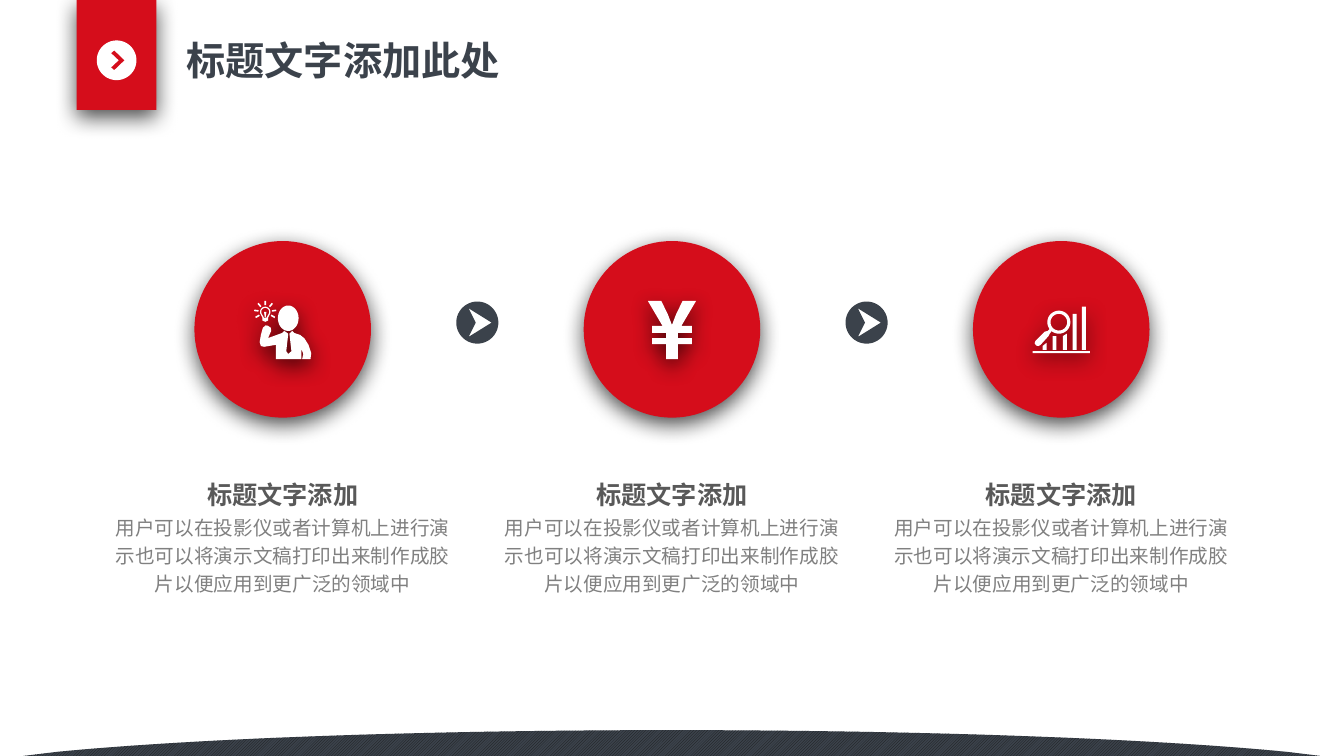
from dataclasses import dataclass
from math import cos, radians, sin

from lxml.etree import SubElement
from pptx import Presentation
from pptx.dml.color import RGBColor
from pptx.enum.dml import MSO_PATTERN
from pptx.enum.lang import MSO_LANGUAGE_ID
from pptx.enum.shapes import MSO_SHAPE
from pptx.enum.text import MSO_ANCHOR, PP_ALIGN
from pptx.oxml.ns import qn
from pptx.util import Cm, Pt

TITLE = "标题文字添加此处"
BODY = "用户可以在投影仪或者计算机上进行演示也可以将演示文稿打印出来制作成胶片以便应用到更广泛的领域中"
STEPS = [("标题文字添加", BODY, "person"), ("标题文字添加", BODY, "yen"), ("标题文字添加", BODY, "growth")]


@dataclass(frozen=True)
class Theme:
    red: str = "D50D1B"
    dark: str = "3B424B"
    stripe: str = "181818"
    white: str = "FFFFFF"
    heading: str = "595959"
    body: str = "808080"
    title_font: str = "Lato"
    text_font: str = "Arial"
    title_size: int = 28
    heading_size: int = 18
    body_size: int = 14


THEME = Theme()
WIDTH, HEIGHT = 33.87, 19.05
MIDDLE, PITCH = WIDTH / 2, 9.81
DISC_SIZE, DISC_Y, ARROW_Y = 4.45, 8.3, 8.13

# Outlines are in centimetres around the centre of each icon.
CHEVRON = [(-.06, -.25), (-.14, -.18), (.05, 0), (-.14, .18), (-.06, .25), (.2, 0)]
ARROW = [(-.22, -.36), (.36, 0), (-.22, .36), (-.04, 0)]
YEN_HALF = [(.15, .75), (.15, .37), (.5, .37), (.5, .22), (.15, .22), (.15, .09), (.5, .09),
            (.5, -.09), (.24, -.09), (.61, -.72), (.27, -.72), (.1, -.37), (0, -.11)]
TORSO = [(-.37, -.09), (-.3, -.04), (-.29, .04), (-.37, .22), (-.01, .09), (.04, .04),
         (.14, .11), (.09, .55), (.14, .62), (.22, .55), (.17, .11), (.24, .04), (.29, .09),
         (.44, .14), (.55, .23), (.65, .39), (.72, .6), (.7, .75), (.49, .75), (.52, .62),
         (.47, .49), (.47, .75), (-.17, .75), (-.17, .39), (-.47, .44), (-.55, .42),
         (-.58, .32), (-.55, .14), (-.5, -.04), (-.43, -.1)]
HANDLE = [(-.29, -.01), (-.24, .04), (-.29, .11), (-.32, .17), (-.52, .39), (-.57, .42),
          (-.63, .41), (-.67, .35), (-.65, .29), (-.42, .06), (-.34, .04)]
BARS = [(-.47, .42, .34), (-.22, .17, .17), (.04, .17, .11), (.29, -.39, -.39), (.52, -.57, -.57)]
BULB_X, BULB_Y = -.44, -.44
RAY_ANGLES = [-30, 8, 50, 90, 130, 172, 210]


def arc(x, y, across, down, start=0, end=360, steps=60):
    """Points on an ellipse, with angles counted anticlockwise from the right."""
    angles = [radians(start + (end - start) * step / steps) for step in range(steps + 1)]
    return [(x + across * cos(angle), y - down * sin(angle)) for angle in angles]


def bezier(start, first, second, end, steps=30):
    points = []
    for step in range(steps + 1):
        t = step / steps
        weights = ((1 - t) ** 3, 3 * t * (1 - t) ** 2, 3 * t * t * (1 - t), t ** 3)
        points.append(tuple(sum(weight * point[axis] for weight, point in
                                zip(weights, (start, first, second, end))) for axis in (0, 1)))
    return points


def mirror(points):
    return [(-x, y) for x, y in reversed(points)]


def ray(angle):
    across, up = cos(radians(angle)), sin(radians(angle))
    return [(BULB_X + reach * across + side * up, BULB_Y - reach * up + side * across)
            for reach, side in ((.17, -.02), (.28, -.02), (.28, .02), (.17, .02))]


def person():
    bulb = arc(BULB_X, BULB_Y, .13, .13, 210, -30) + [
        (-.37, -.29), (-.37, -.22), (-.44, -.19), (-.51, -.22), (-.51, -.29)]
    glass = arc(BULB_X, BULB_Y, .1, .1, 210, -30) + [(-.41, -.29), (-.47, -.29)]
    filament = [(-.47, -.44), (-.41, -.44), (-.43, -.3), (-.45, -.3)]
    return [TORSO, arc(.14, -.28, .26, .32), bulb, glass, filament, *map(ray, RAY_ANGLES)]


def growth():
    bars = [[(x, left), (x + .1, right), (x + .1, .52), (x, .52)] for x, left, right in BARS]
    base = [(-.72, .55), (.72, .55), (.72, .6), (-.72, .6)]
    return [base, *bars, HANDLE, arc(-.06, -.18, .29, .29), arc(-.06, -.18, .21, .21)]


ICONS = {"person": person(), "yen": [YEN_HALF + mirror(YEN_HALF)], "growth": growth()}


def paint(shape, color, shadow=False):
    shape.shadow.inherit = False
    shape.fill.solid()
    shape.fill.fore_color.rgb = RGBColor.from_string(color)
    shape.line.fill.background()
    if shadow:
        effects = shape._element.spPr.find(qn("a:effectLst"))
        outer = SubElement(effects, qn("a:outerShdw"), blurRad=str(Pt(16)), dist=str(Pt(5)),
                           dir="5400000", algn="t", rotWithShape="0")
        black = SubElement(outer, qn("a:srgbClr"), val="000000")
        SubElement(black, qn("a:alpha"), val="71000")


def add_outline(page, x, y, contours, color, shadow=False):
    """Draw contours as one shape; a contour inside another is a hole."""
    placed = [[(Cm(x + across), Cm(y + down)) for across, down in contour] for contour in contours]
    builder = page.shapes.build_freeform(*placed[0][0], scale=1.0)
    builder.add_line_segments(placed[0][1:])
    for contour in placed[1:]:
        builder.move_to(*contour[0])
        builder.add_line_segments(contour[1:])
    shape = builder.convert_to_shape()
    paint(shape, color, shadow)
    return shape


def add_preset(page, kind, left, top, width, height):
    shape = page.shapes.add_shape(kind, Cm(left), Cm(top), Cm(width), Cm(height))
    paint(shape, THEME.red, shadow=True)


def write(box, text, color, font, size, bold, align, spacing, anchor):
    frame = box.text_frame
    for name, value in {"word_wrap": True, "vertical_anchor": anchor, "margin_left": Cm(.25),
                        "margin_right": Cm(.25), "margin_top": Cm(.13),
                        "margin_bottom": Cm(.13)}.items():
        setattr(frame, name, value)
    para = frame.paragraphs[0]
    para.alignment, para.line_spacing = align, spacing
    span = para.add_run()
    span.text = text
    for name, value in {"name": font, "size": Pt(size), "bold": bold,
                        "language_id": MSO_LANGUAGE_ID.SIMPLIFIED_CHINESE}.items():
        setattr(span.font, name, value)
    span.font.color.rgb = RGBColor.from_string(color)
    SubElement(span.font._element, qn("a:ea"), typeface=font)


def add_caption(page, center, top, width, height, text, color, size, bold):
    box = page.shapes.add_textbox(Cm(center - width / 2), Cm(top), Cm(width), Cm(height))
    write(box, text, color, THEME.text_font, size, bold, PP_ALIGN.CENTER, 1.2, MSO_ANCHOR.TOP)


def add_ground(page):
    half = [(16.35, .65), *bezier((15.53, .55), (12.17, .22), (6.45, 0), (0, 0))]
    ground = add_outline(page, MIDDLE, 18.4, [half + mirror(half)], THEME.dark)
    ground.fill.patterned()
    ground.fill.pattern = MSO_PATTERN.LIGHT_UPWARD_DIAGONAL
    ground.fill.fore_color.rgb = RGBColor.from_string(THEME.stripe)
    ground.fill.back_color.rgb = RGBColor.from_string(THEME.dark)


def add_header(page):
    add_preset(page, MSO_SHAPE.RECTANGLE, 1.93, 0, 2.01, 2.77)
    add_outline(page, 2.94, 1.52, [arc(0, 0, .5, .5), CHEVRON], THEME.white)
    title = page.shapes.title
    title.left, title.top, title.width, title.height = Cm(4.45), Cm(.79), Cm(10.24), Cm(1.45)
    write(title, TITLE, THEME.dark, THEME.title_font, THEME.title_size, True,
          PP_ALIGN.LEFT, 1.0, MSO_ANCHOR.MIDDLE)


def main():
    deck = Presentation()
    deck.slide_width, deck.slide_height = Cm(WIDTH), Cm(HEIGHT)
    page = deck.slides.add_slide(deck.slide_layouts[5])
    add_ground(page)
    add_header(page)
    for index, (heading, body, icon) in enumerate(STEPS):
        center = MIDDLE + (index - 1) * PITCH
        add_preset(page, MSO_SHAPE.OVAL, center - DISC_SIZE / 2, DISC_Y - DISC_SIZE / 2,
                   DISC_SIZE, DISC_SIZE)
        add_outline(page, center, DISC_Y, ICONS[icon], THEME.white, shadow=True)
        if index:
            add_outline(page, center - PITCH / 2, ARROW_Y, [arc(0, 0, .53, .53), ARROW], THEME.dark)
        add_caption(page, center, 11.79, 6.22, 1.09, heading, THEME.heading, THEME.heading_size, True)
        add_caption(page, center, 12.75, 9.35, 2.41, body, THEME.body, THEME.body_size, False)
    deck.save("out.pptx")


if __name__ == "__main__":
    main()
